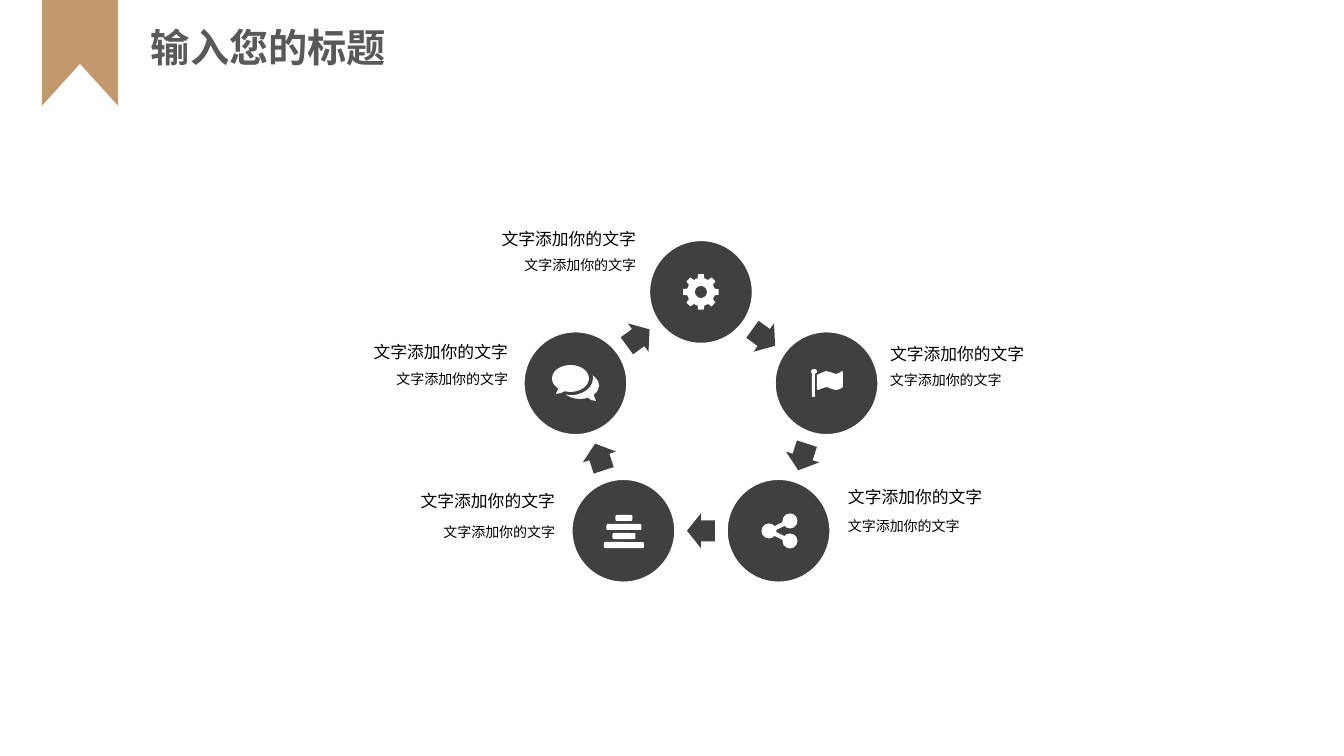
from dataclasses import dataclass
from math import cos, radians, sin

from lxml import etree
from pptx import Presentation
from pptx.dml.color import RGBColor
from pptx.enum.shapes import MSO_CONNECTOR, MSO_SHAPE
from pptx.enum.text import MSO_ANCHOR, MSO_AUTO_SIZE, PP_ALIGN
from pptx.oxml.ns import qn
from pptx.util import Emu, Pt

OVAL, RECT, ROUND = MSO_SHAPE.OVAL, MSO_SHAPE.RECTANGLE, MSO_SHAPE.ROUNDED_RECTANGLE
ARROW, TENT = MSO_SHAPE.RIGHT_ARROW, MSO_SHAPE.ISOSCELES_TRIANGLE
LEFT, RIGHT = PP_ALIGN.LEFT, PP_ALIGN.RIGHT
MIDDLE, GROW = MSO_ANCHOR.MIDDLE, MSO_AUTO_SIZE.SHAPE_TO_FIT_TEXT


@dataclass(frozen=True)
class Theme:
    tan: str = "C3986D"
    dark: str = "404040"
    white: str = "FFFFFF"
    grey: str = "595959"
    black: str = "000000"
    bold: str = "Noto Sans CJK SC"
    body: str = "Roboto Condensed"
    title: int = 28
    head: int = 12
    sub: int = 10


T = Theme()

# Content, lengths in px
TITLE = "输入您的标题"
WORDS = "文字添加你的文字"
LABELS = [  # edge the text hangs on, side, top of heading, top of detail
    (890, LEFT, 344, 371),
    (555, RIGHT, 491, 523),
    (508, RIGHT, 342, 370),
    (636, RIGHT, 229, 256),
    (848, LEFT, 487, 517),
]
RING = (701, 424, 132)  # centre x, centre y, radius
STEPS, DISC = 5, 103
HEAD_W, SUB_W = 138, 215
BUBBLES = [
    (OVAL, (561, 372, 38, 27), T.white),
    (None, [(586, 396), (593, 393), (596, 401), (591, 400)], T.white),
    (OVAL, (549, 361, 44, 34), T.dark),
    (OVAL, (552, 365, 37, 27), T.white),
    (None, [(559, 387), (556, 394), (561, 393), (567, 390)], T.white),
]
FLAG = [
    (OVAL, (811, 369, 6, 5), T.white),
    (ROUND, (812, 372, 3, 25), T.white),
    (None, [(817, 375), (821, 373), (826, 371), (830, 372), (836, 374),
            (839, 373), (842, 371), (843, 372), (843, 387), (840, 389),
            (836, 390), (832, 389), (827, 387), (823, 388), (818, 390),
            (817, 389)], T.white),
]
NODES = [(769, 531), (790, 521), (790, 541)]
NODE = 15
BARS = [17, 35, 23, 40]
BAR_X, BAR_Y, BAR_H, BAR_GAP = 624, 515, 6, 9
GEAR_Y, TEETH = 292, 8
TOOTH = [(-14, 14), (-9, 18), (9, 18), (14, 14)]  # degrees, radius

PX = 914400 / 100.8
deck = Presentation()
deck.slide_width, deck.slide_height = Emu(12192000), Emu(6858000)
slide = deck.slides.add_slide(deck.slide_layouts[6])
shapes = slide.shapes


def emu(*nums):
    return [Emu(round(n * PX)) for n in nums]


def paint(shape, fill):
    shape.shadow.inherit = False
    shape.fill.solid()
    shape.fill.fore_color.rgb = RGBColor.from_string(fill)
    shape.line.fill.background()
    return shape


def add(kind, box, fill):
    return paint(shapes.add_shape(kind, *emu(*box)), fill)


def poly(points, fill):
    first, *rest = [emu(*p) for p in points]
    pen = shapes.build_freeform(*first, scale=1)
    pen.add_line_segments(rest, close=True)
    return paint(pen.convert_to_shape(), fill)


def middle(x, y, w, h):
    """Box of the given size centred on x, y."""
    return x - w / 2, y - h / 2, w, h


def polar(x, y, size, turn):
    """Point at a clockwise angle from straight up."""
    return x + size * sin(radians(turn)), y - size * cos(radians(turn))


def write(text, box, size, font, color, bold=False, side=LEFT):
    item = shapes.add_textbox(*emu(*box))
    frame = item.text_frame
    frame.text = text
    frame.word_wrap = True
    frame.auto_size = GROW
    para = frame.paragraphs[0]
    para.alignment = side
    run = para.runs[0]
    run.font.size, run.font.bold, run.font.name = Pt(size), bold, font
    run.font.color.rgb = RGBColor.from_string(color)
    etree.SubElement(run.font._element, qn("a:ea")).set("typeface", font)
    return frame


def label(edge, side, top, wide, high, size):
    left = edge if side == LEFT else edge - wide
    frame = write(WORDS, (left, top, wide, high), size, T.body, T.black, side=side)
    frame.vertical_anchor = MIDDLE
    frame.margin_left = frame.margin_right = 0
    frame.margin_top = frame.margin_bottom = 0


def icon(parts):
    for kind, form, fill in parts:
        if kind is None:
            poly(form, fill)
        else:
            add(kind, form, fill)


def gear(x, y):
    step = 360 / TEETH
    poly([polar(x, y, size, i * step + turn)
          for i in range(TEETH) for turn, size in TOOTH], T.white)
    add(OVAL, middle(x, y, 12, 12), T.dark)


def share():
    for end in NODES[1:]:
        link = shapes.add_connector(MSO_CONNECTOR.STRAIGHT, *emu(*NODES[0], *end))
        link.line.width = Pt(3)
        link.line.color.rgb = RGBColor.from_string(T.white)
        etree.SubElement(link._element.spPr, qn("a:effectLst"))
    for x, y in NODES:
        add(OVAL, middle(x, y, NODE, NODE), T.white)


def cycle():
    x, y, size = RING
    turn = 360 / STEPS
    for i in range(STEPS):
        disc = add(OVAL, middle(*polar(x, y, size, i * turn), DISC, DISC), T.dark)
        disc.line.color.rgb = RGBColor.from_string(T.white)
        disc.line.width = Pt(1)
        half = (i + 0.5) * turn
        spot = polar(x, y, size * cos(radians(turn / 2)), half)
        arrow = add(ARROW, middle(*spot, 28, 35), T.dark)
        arrow.adjustments[0], arrow.adjustments[1] = 0.6, 0.5
        arrow.rotation = half


add(RECT, (42, -1, 76, 107), T.tan)
add(TENT, (42, 64, 76, 42), T.white)
write(TITLE, (141, 18, 313, 57), T.title, T.bold, T.grey, bold=True)
for edge, side, top, low in LABELS:
    label(edge, side, top, HEAD_W, 20, T.head)
    label(edge, side, low, SUB_W, 17, T.sub)
cycle()
gear(RING[0], GEAR_Y)
icon(BUBBLES)
for i, wide in enumerate(BARS):
    bar = add(ROUND, (BAR_X - wide / 2, BAR_Y + i * BAR_GAP, wide, BAR_H), T.white)
    bar.adjustments[0] = 0.25
icon(FLAG)
share()
deck.save("out.pptx")
